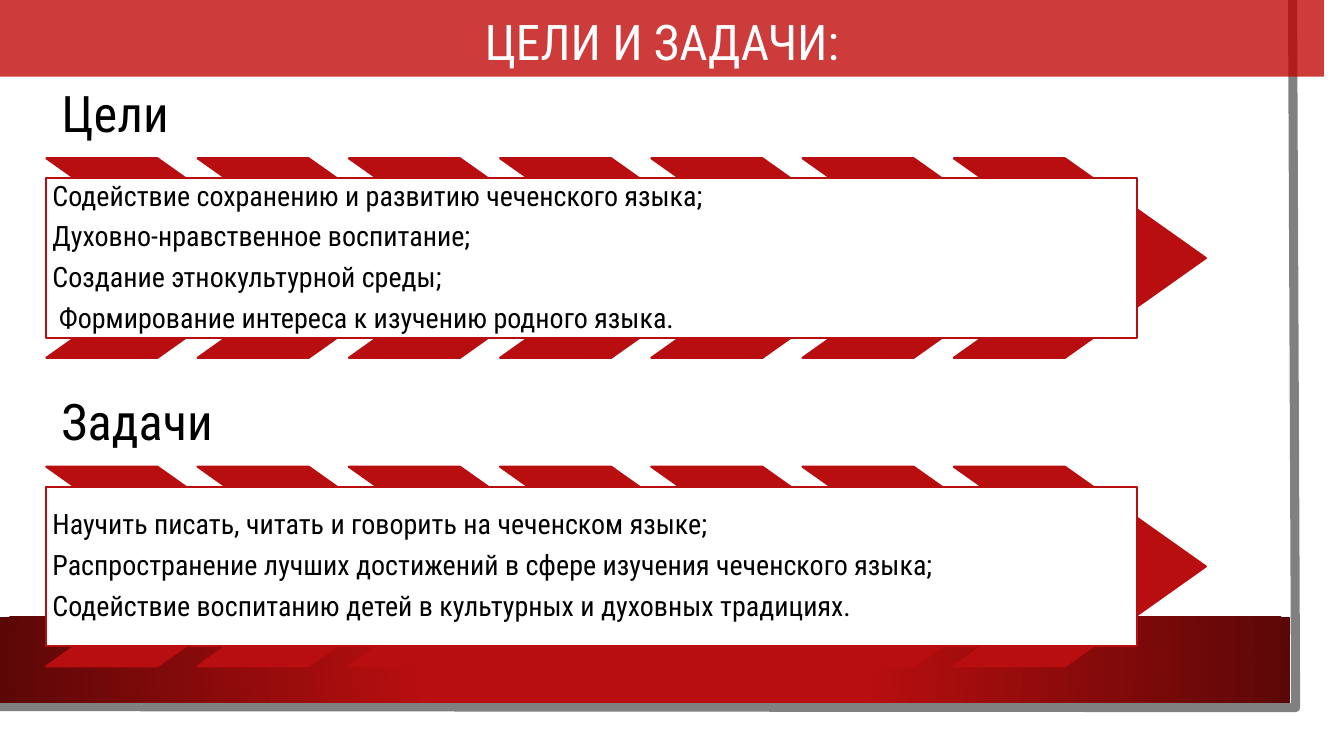
from dataclasses import dataclass

from lxml import etree
from pptx import Presentation
from pptx.dml.color import RGBColor
from pptx.enum.shapes import MSO_SHAPE as SHAPE
from pptx.enum.text import MSO_ANCHOR as ANCHOR, MSO_AUTO_SIZE as AUTO, PP_ALIGN as ALIGN
from pptx.oxml import parse_xml
from pptx.oxml.ns import nsdecls, qn
from pptx.util import Inches, Pt

TITLE = "ЦЕЛИ И ЗАДАЧИ:"
SECTIONS = [
    ("Цели", [
        "Содействие сохранению и развитию чеченского языка;",
        "Духовно-нравственное воспитание;",
        "Создание этнокультурной среды;",
        " Формирование интереса к изучению родного языка.",
    ]),
    ("Задачи", [
        "Научить писать, читать и говорить на чеченском языке;",
        "Распространение лучших достижений в сфере изучения чеченского языка;",
        "Содействие воспитанию детей в культурных и духовных традициях.",
    ]),
]


@dataclass(frozen=True)
class Theme:
    font: str = "Roboto Condensed"
    red: str = "B80E0F"
    dark_red: str = "5C0707"
    banner: str = "C00000"
    gray: str = "808080"
    white: str = "FFFFFF"
    black: str = "000000"
    title_size: float = 35.1
    head_size: float = 36
    list_size: float = 20
    outline: float = 1.5
    frame: float = 6.5


THEME = Theme()
LEFT = 0.46
HEAD_TOP, SECTION_STEP = 0.6, 3.06
HEAD_W, HEAD_H = 10.68, 0.97
CHEVRONS, CHEVRON_STEP = 7, 1.5
CHEVRON_W, CHEVRON_H = 2.5, 1.98
LIST_W, LIST_H = 10.82, 1.58


def rgb(value):
    return RGBColor.from_string(value)


def place(sp, left, top, width, height):
    sp.left, sp.top, sp.width, sp.height = map(Inches, (left, top, width, height))


def paint(sp, fill, line=None):
    sp.fill.solid()
    sp.fill.fore_color.rgb = rgb(fill)
    if line:
        sp.line.color.rgb = rgb(line)
        sp.line.width = Pt(THEME.outline)
    else:
        sp.line.fill.background()


def write(sp, lines, size, color, anchor, inset=None, align=ALIGN.LEFT, after=0):
    tf = sp.text_frame
    tf.text = "\n".join(lines)
    tf.word_wrap = True
    tf.auto_size = AUTO.NONE
    tf.vertical_anchor = anchor
    if inset is not None:
        tf.margin_left = tf.margin_right = tf.margin_top = tf.margin_bottom = Inches(inset)
    for p in tf.paragraphs:
        pPr = p._p.get_or_add_pPr()
        pPr.set("marL", "0")
        pPr.set("indent", "0")
        etree.SubElement(pPr, qn("a:buNone"))
        p.alignment = align
        p.line_spacing = 0.9
        p.space_before = Pt(0)
        p.space_after = Pt(after)
        for r in p.runs:
            r.font.name = THEME.font
            r.font.size = Pt(size)
            r.font.bold = False
            r.font.color.rgb = rgb(color)


def add_backdrop(shapes):
    builder = shapes.build_freeform(Inches(12.82), 0)
    builder.add_line_segments(
        [(Inches(12.85), Inches(7.02)), (Inches(-0.03), Inches(7.01))], close=False)
    frame = builder.convert_to_shape()
    frame.shadow.inherit = False
    frame.fill.background()
    frame.line.color.rgb = rgb(THEME.gray)
    frame.line.width = Pt(THEME.frame)

    band = shapes.add_shape(SHAPE.RECTANGLE, 0, Inches(6.12), Inches(12.8), Inches(0.85))
    band.shadow.inherit = False
    band.line.fill.background()
    gradient = parse_xml(
        f'<a:gradFill {nsdecls("a")} rotWithShape="1"><a:gsLst>'
        f'<a:gs pos="34000"><a:srgbClr val="{THEME.red}"/></a:gs>'
        f'<a:gs pos="100000"><a:srgbClr val="{THEME.dark_red}"/></a:gs></a:gsLst>'
        '<a:path path="circle"><a:fillToRect l="50000" t="50000" r="50000" b="50000"/>'
        '</a:path></a:gradFill>')
    band._element.spPr.find(qn("a:prstGeom")).addnext(gradient)


def add_section(shapes, head, body, title, lines, top):
    place(head, LEFT, top, HEAD_W, HEAD_H)
    write(head, [title], THEME.head_size, THEME.black, ANCHOR.BOTTOM, inset=0.15)

    chevron_top = top + HEAD_H
    for i in range(CHEVRONS):
        sp = shapes.add_shape(
            SHAPE.CHEVRON, Inches(LEFT + i * CHEVRON_STEP), Inches(chevron_top),
            Inches(CHEVRON_W), Inches(CHEVRON_H))
        sp.adjustments[0] = 0.706
        sp.shadow.inherit = False
        paint(sp, THEME.red, THEME.red)

    place(body, LEFT, chevron_top + (CHEVRON_H - LIST_H) / 2, LIST_W, LIST_H)
    paint(body, THEME.white, THEME.red)
    write(body, lines, THEME.list_size, THEME.black, ANCHOR.MIDDLE, inset=0.06, after=7.5)
    shapes._spTree.append(body._element)


def add_title(shapes):
    title = shapes.title
    place(title, 0, 0, 13.13, 0.76)
    paint(title, THEME.banner)
    color = title._element.spPr.find(qn("a:solidFill"))[0]
    etree.SubElement(color, qn("a:alpha"), val="77000")
    write(title, [TITLE], THEME.title_size, THEME.white, ANCHOR.BOTTOM, align=ALIGN.CENTER)
    shapes._spTree.append(title._element)


def main():
    prs = Presentation()
    prs.slide_width, prs.slide_height = Inches(13.33), Inches(7.5)
    slide = prs.slides.add_slide(prs.slide_layouts.get_by_name("Comparison"))
    shapes = slide.shapes
    holders = {sp.placeholder_format.idx: sp for sp in slide.placeholders}
    add_backdrop(shapes)
    for i, (title, lines) in enumerate(SECTIONS):
        add_section(shapes, holders[2 * i + 1], holders[2 * i + 2], title, lines,
                    HEAD_TOP + i * SECTION_STEP)
    add_title(shapes)
    prs.save("out.pptx")


if __name__ == "__main__":
    main()
